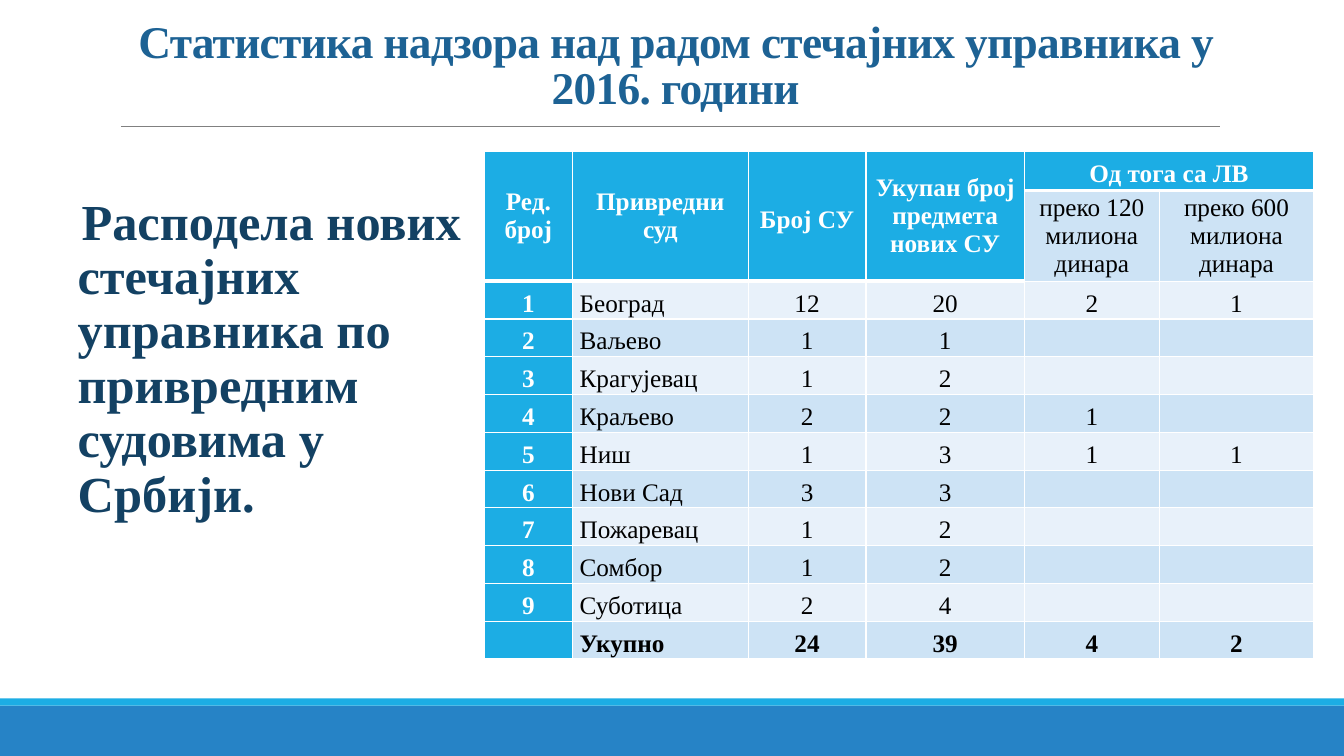
"""Builds a slide on new bankruptcy administrators by commercial court."""
from lxml import etree
from pptx import Presentation, util as u
from pptx.dml.color import RGBColor
from pptx.enum import shapes, text
from pptx.oxml import ns

HUE = {"bar": "2683C6", "sky": "1CADE4", "rule": "808080", "title": "1D6294",
       "body": "134163", "light": "E8F1FA", "mid": "CDE3F5",
       "white": "FFFFFF", "black": "000000"}
W, H = 13.33, 7.5


def tint(name):
    return RGBColor.from_string(HUE[name])


def write(frame, words, size=18, color="black", bold=False, center=True, line=1.0, before=0, after=0):
    frame.word_wrap = True
    par = frame.paragraphs[0]
    par.alignment = text.PP_ALIGN.CENTER if center else text.PP_ALIGN.LEFT
    par.line_spacing = line
    par.space_before, par.space_after = u.Pt(before), u.Pt(after)
    run = par.add_run()
    run.text = words
    run.font.name, run.font.size, run.font.bold = "Times New Roman", u.Pt(size), bold
    run.font.color.rgb = tint(color)
    return par, run


deck = Presentation()
deck.slide_width, deck.slide_height = u.Inches(W), u.Inches(H)
slide = deck.slides.add_slide(deck.slide_layouts[1])

for top, tall, hue in [(7, 0.5, "bar"), (6.93, 0.07, "sky")]:
    band = slide.shapes.add_shape(shapes.MSO_SHAPE.RECTANGLE, 0, u.Inches(top), u.Inches(W), u.Inches(tall))
    band.shadow.inherit = False
    band.fill.solid()
    band.fill.fore_color.rgb = tint(hue)
    band.line.fill.background()

rule = slide.shapes.add_connector(shapes.MSO_CONNECTOR.STRAIGHT,
                                  u.Inches(1.2), u.Inches(1.25), u.Inches(12.1), u.Inches(1.25))
rule.line.color.rgb = tint("rule")
rule.line.width = u.Pt(0.5)
etree.SubElement(rule._element.spPr, ns.qn("a:effectLst"))

title, body = slide.shapes.title, slide.placeholders[1]
for box, place, pads, anchor in [
        (title, (1.2, 0.31, 11, 1.59), (0.1, 0, 0.1, 0.77), text.MSO_ANCHOR.BOTTOM),
        (body, (0.67, 1.9, 3.96, 4.58), (0, 0.05, 0, 0.05), text.MSO_ANCHOR.TOP)]:
    box.left, box.top, box.width, box.height = map(u.Inches, place)
    frame = box.text_frame
    frame.auto_size = text.MSO_AUTO_SIZE.NONE
    frame.vertical_anchor = anchor
    frame.margin_left, frame.margin_top, frame.margin_right, frame.margin_bottom = map(u.Inches, pads)

par, run = write(title.text_frame, "Статистика надзора над радом стечајних управника у 2016. години",
                 size=32.4, color="title", bold=True, line=0.85)
run._r.get_or_add_rPr().set("spc", "-50")

par, run = write(body.text_frame, "Расподелa нових стечајних управника по привредним судовима у Србији.",
                 size=36, color="body", bold=True, center=False, line=0.9, before=12, after=2)
props = par._p.get_or_add_pPr()
props.set("marL", str(u.Inches(0.1)))
props.set("indent", str(-u.Inches(0.1)))
etree.SubElement(props, ns.qn("a:buChar"), char=" ")

ROWS = [
    ["Ред. број", "Привредни суд", "Број СУ", "Укупан број предмета нових СУ", "Од тога са ЛВ", ""],
    ["", "", "", "", "преко 120 милиона динара", "преко 600 милиона динара"],
    ["1", "Београд", "12", "20", "2", "1"],
    ["2", "Ваљево", "1", "1", "", ""],
    ["3", "Крагујевац", "1", "2", "", ""],
    ["4", "Краљево", "2", "2", "1", ""],
    ["5", "Ниш", "1", "3", "1", "1"],
    ["6", "Нови Сад", "3", "3", "", ""],
    ["7", "Пожаревац", "1", "2", "", ""],
    ["8", "Сомбор", "1", "2", "", ""],
    ["9", "Суботица", "2", "4", "", ""],
    ["", "Укупно", "24", "39", "4", "2"],
]
COLS = [0.88, 1.74, 1.17, 1.57, 1.34, 1.53]
HEAD = [0.39, 0.9]
TALL = 5.04
last = len(ROWS) - 1
grid = slide.shapes.add_table(len(ROWS), len(COLS), u.Inches(4.8), u.Inches(1.5),
                              u.Inches(sum(COLS)), u.Inches(TALL)).table
grid.first_row = grid.horz_banding = False
for col, wide in zip(grid.columns, COLS):
    col.width = u.Inches(wide)
step = (TALL - sum(HEAD)) / (len(ROWS) - len(HEAD))
for row, tall in zip(grid.rows, HEAD + [step] * (len(ROWS) - len(HEAD))):
    row.height = u.Inches(tall)

for r, row in enumerate(ROWS):
    for c, words in enumerate(row):
        cell = grid.cell(r, c)
        blue = r == 0 or c == 0 or (r == 1 and c < 4)
        cell.fill.solid()
        cell.fill.fore_color.rgb = tint("sky" if blue else "mid" if r % 2 else "light")
        cell.vertical_anchor = text.MSO_ANCHOR.MIDDLE
        cell.margin_left = cell.margin_right = u.Inches(0.07)
        cell.margin_top = cell.margin_bottom = 0
        if words:
            loose = r > 1 or words in ("Број СУ", "Од тога са ЛВ")
            write(cell.text_frame, words, color="white" if blue else "black", bold=blue or r == last,
                  center=r < 2 or c != 1, line=1.25 if loose else 1.0, before=0 if (r, c) == (1, 4) else 3)
        above = 3 if r == 1 or (r == 2 and c < 4) else 1
        below = 3 if r == 0 or (r == 1 and c < 4) else 1
        for i, (side, thick) in enumerate([("L", 1), ("R", 1), ("T", above), ("B", below)]):
            edge = etree.Element(ns.qn("a:ln" + side), w=str(u.Pt(thick)))
            paint = etree.SubElement(edge, ns.qn("a:solidFill"))
            etree.SubElement(paint, ns.qn("a:srgbClr"), val=HUE["white"])
            cell._tc.get_or_add_tcPr().insert(i, edge)

for c in range(4):
    grid.cell(0, c).merge(grid.cell(1, c))
grid.cell(0, 4).merge(grid.cell(0, 5))

deck.save("out.pptx")
